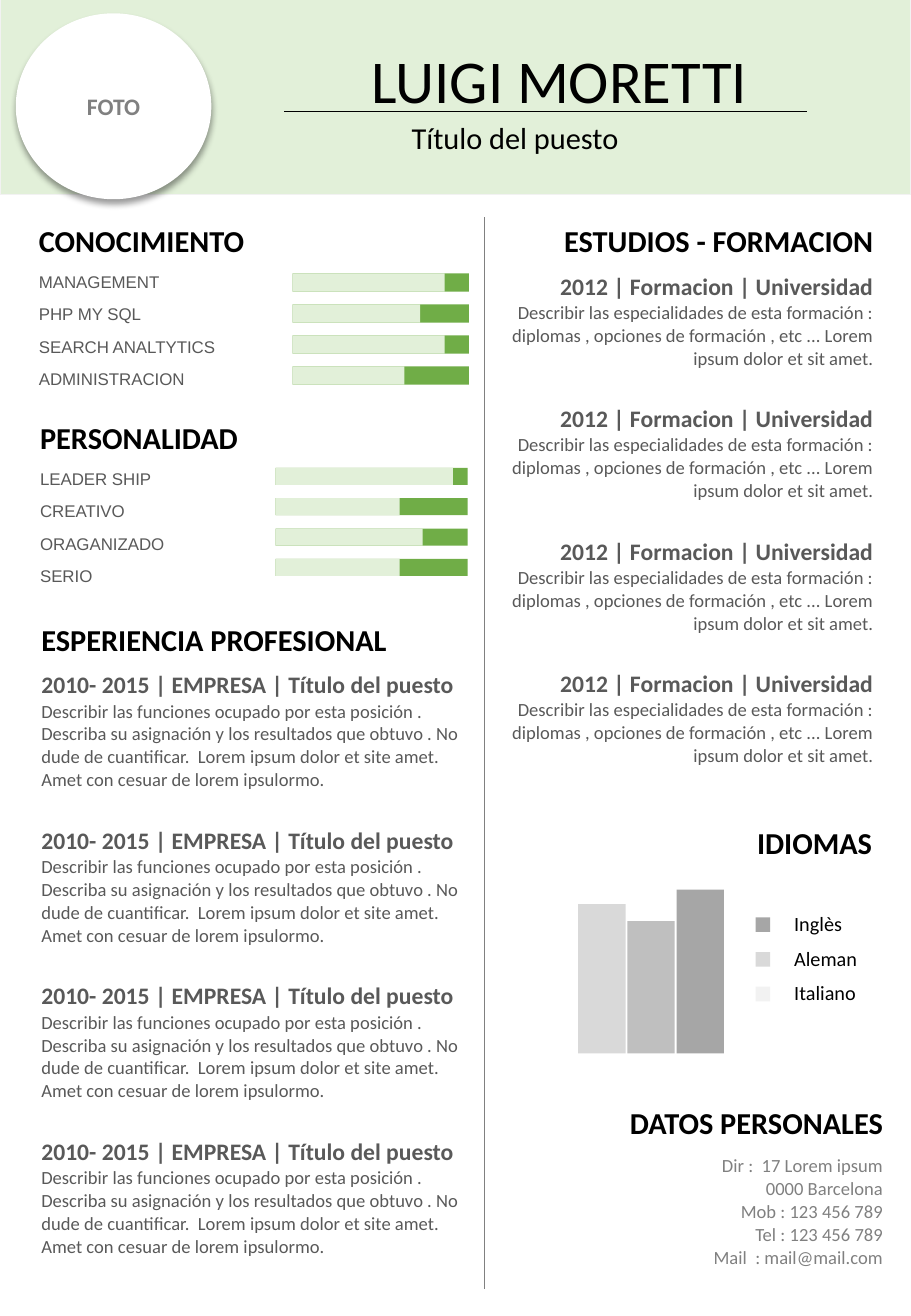
from lxml.etree import SubElement
from pptx import Presentation
from pptx.dml.color import RGBColor
from pptx.enum.shapes import MSO_CONNECTOR, MSO_SHAPE
from pptx.enum.text import MSO_ANCHOR, MSO_AUTO_SIZE, PP_ALIGN
from pptx.oxml.ns import qn
from pptx.util import Inches, Pt

COLORS = {
    "black": "000000", "white": "FFFFFF", "text": "595959", "muted": "808080",
    "mint": "E2F0D9", "green": "70AD47", "edge": "F2F2F2",
    "light": "D9D9D9", "middle": "BFBFBF", "dark": "A6A6A6",
}
STYLES = {
    "name": dict(name="Calibri", size=36, color="black", bold=False),
    "role": dict(name="Calibri", size=18, color="black", bold=False),
    "heading": dict(name="Calibri", size=18, color="black", bold=True),
    "entry": dict(name="Calibri", size=14, color="text", bold=True),
    "body": dict(name="Calibri", size=11, color="text", bold=False),
    "contact": dict(name="Calibri", size=11, color="muted", bold=False),
    "skill": dict(name="Arial", size=10, color="text", bold=False),
    "legend": dict(name="Calibri", size=12, color="black", bold=False),
    "photo": dict(name="Calibri", size=14, color="muted", bold=True),
}
NO_TABLE_STYLE = "{2D5ABB26-0587-4C30-8999-92F81FD0307C}"
HEADING_HEIGHT = 0.4

# Content: each table row is a list of (text, style) paragraphs
JOB = [
    ("2010- 2015 | EMPRESA | Título del puesto", "entry"),
    ("Describir las funciones ocupado por esta posición . Describa su asignación "
     "y los resultados que obtuvo . No dude de cuantificar.  Lorem ipsum dolor et "
     "site amet. Amet con cesuar de lorem ipsulormo.", "body"),
]
STUDY = [
    ("2012 | Formacion | Universidad", "entry"),
    ("Describir las especialidades de esta formación : diplomas , opciones de "
     "formación , etc ... Lorem ipsum dolor et sit amet.", "body"),
]
CONTACT = [(line, "contact") for line in (
    "Dir :  17 Lorem ipsum", "0000 Barcelona", "Mob : 123 456 789",
    "Tel : 123 456 789", "Mail  : mail@mail.com")]
# heading, left, top, width, row height, alignment, rows
SECTIONS = [
    ("ESPERIENCIA PROFESIONAL", 0.24, 5.07, 3.76, 1.28, PP_ALIGN.LEFT, [JOB] * 4),
    ("ESTUDIOS - FORMACION", 3.99, 1.79, 3.3, 1.09, PP_ALIGN.RIGHT, [STUDY] * 4),
    ("DATOS PERSONALES", 4.76, 9.05, 2.61, 1.02, PP_ALIGN.RIGHT, [CONTACT]),
    ("IDIOMAS", 4.67, 6.74, 2.61, 0, PP_ALIGN.RIGHT, []),
]
# heading, table box, bar box (left, top, width, height, pitch), (skill, level width)
SKILLS = [
    ("CONOCIMIENTO", (0.22, 1.79, 3.64), (2.41, 2.25, 1.45, 0.15, 0.255),
     [("MANAGEMENT", 1.25), ("PHP MY SQL", 1.05),
      ("SEARCH ANALTYTICS", 1.25), ("ADMINISTRACION", 0.92)]),
    ("PERSONALIDAD", (0.23, 3.41, 3.62), (2.27, 3.85, 1.58, 0.14, 0.25),
     [("LEADER SHIP", 1.46), ("CREATIVO", 1.02),
      ("ORAGANIZADO", 1.21), ("SERIO", 1.02)]),
]
SKILL_ROW = 0.268
LANGUAGE_BARS = [("light", 1.23), ("middle", 1.09), ("dark", 1.35)]
LEGEND = [("Inglès", "dark", 0.6), ("Aleman", "light", 0.73), ("Italiano", "edge", 0.71)]

deck = Presentation()
deck.slide_width, deck.slide_height = Inches(7.5), Inches(10.83)
page = deck.slides.add_slide(deck.slide_layouts[6])


def rgb(color):
    return RGBColor.from_string(COLORS[color])


def write(frame, paragraphs, align=PP_ALIGN.LEFT):
    for index, (text, style) in enumerate(paragraphs):
        para = frame.add_paragraph() if index else frame.paragraphs[0]
        para.alignment = align
        span = para.add_run()
        span.text = text
        values = dict(STYLES[style])
        span.font.color.rgb = rgb(values.pop("color"))
        values["size"] = Pt(values["size"])
        for key, value in values.items():
            setattr(span.font, key, value)


def add_block(left, top, width, height, color, kind=MSO_SHAPE.RECTANGLE):
    block = page.shapes.add_shape(
        kind, Inches(left), Inches(top), Inches(width), Inches(height))
    block.shadow.inherit = False
    block.fill.solid()
    block.fill.fore_color.rgb = rgb(color)
    block.line.fill.background()
    return block


def add_label(left, top, width, height, text, style):
    box = page.shapes.add_textbox(
        Inches(left), Inches(top), Inches(width), Inches(height))
    box.text_frame.word_wrap = False
    box.text_frame.auto_size = MSO_AUTO_SIZE.SHAPE_TO_FIT_TEXT
    write(box.text_frame, [(text, style)])


def add_section(heading, left, top, width, row_height, align, rows,
                anchor=MSO_ANCHOR.TOP):
    content = [[(heading, "heading")]] + rows
    heights = [HEADING_HEIGHT] + [row_height] * len(rows)
    frame = page.shapes.add_table(
        len(content), 1, Inches(left), Inches(top), Inches(width), Inches(sum(heights)))
    table = frame.table
    table.first_row = table.horz_banding = False
    frame.element.find(".//" + qn("a:tableStyleId")).text = NO_TABLE_STYLE
    for index, paragraphs in enumerate(content):
        table.rows[index].height = Inches(heights[index])
        cell = table.cell(index, 0)
        cell.fill.background()
        cell.vertical_anchor = anchor
        write(cell.text_frame, paragraphs, align)


def add_rule(start_x, start_y, end_x, end_y, color):
    rule = page.shapes.add_connector(
        MSO_CONNECTOR.STRAIGHT, Inches(start_x), Inches(start_y),
        Inches(end_x), Inches(end_y))
    rule.line.color.rgb = rgb(color)
    rule.line.width = Pt(0.5)
    SubElement(rule.element.spPr, qn("a:effectLst"))


# Header band
band = add_block(0, -0.02, 7.5, 1.62, "mint")
band.line.color.rgb = rgb("edge")
band.line.width = Pt(1)

# Text sections
for section in SECTIONS:
    add_section(*section)

# Language bars, standing on one baseline
for index, (color, height) in enumerate(LANGUAGE_BARS):
    add_block(4.76 + index * 0.405, 8.67 - height, 0.39, height, color)
for index, (language, color, width) in enumerate(LEGEND):
    offset = index * 0.285
    add_block(6.22, 7.55 + offset, 0.12, 0.12, color)
    add_label(6.44, 7.45 + offset, width, 0.3, language, "legend")

# Skills with level bars
for heading, place, (left, top, width, height, pitch), skills in SKILLS:
    rows = [[(skill, "skill")] for skill, level in skills]
    add_section(heading, *place, SKILL_ROW, PP_ALIGN.LEFT, rows, MSO_ANCHOR.MIDDLE)
    for index, (skill, level) in enumerate(skills):
        bar_top = top + index * pitch
        add_block(left, bar_top, width, height, "green")
        add_block(left, bar_top, level, height, "mint")

# Name and role
add_label(2.96, 0.3, 3.33, 0.71, "LUIGI MORETTI", "name")
add_label(3.29, 0.93, 1.93, 0.4, "Título del puesto", "role")
add_rule(2.34, 0.92, 6.64, 0.92, "black")

# Photo disc with a soft shadow
disc = add_block(0.13, 0.11, 1.61, 1.53, "white", MSO_SHAPE.OVAL)
disc.text_frame.vertical_anchor = MSO_ANCHOR.MIDDLE
write(disc.text_frame, [("FOTO", "photo")], PP_ALIGN.CENTER)
effects = disc.element.spPr.find(qn("a:effectLst"))
shadow = SubElement(effects, qn("a:outerShdw"), blurRad=str(Pt(4)),
                    dist=str(Pt(3)), dir="5400000", algn="t", rotWithShape="0")
shade = SubElement(shadow, qn("a:srgbClr"), val=COLORS["black"])
SubElement(shade, qn("a:alpha"), val="40000")

# Column divider
add_rule(3.99, 1.79, 3.99, 10.61, "muted")

deck.save("out.pptx")
